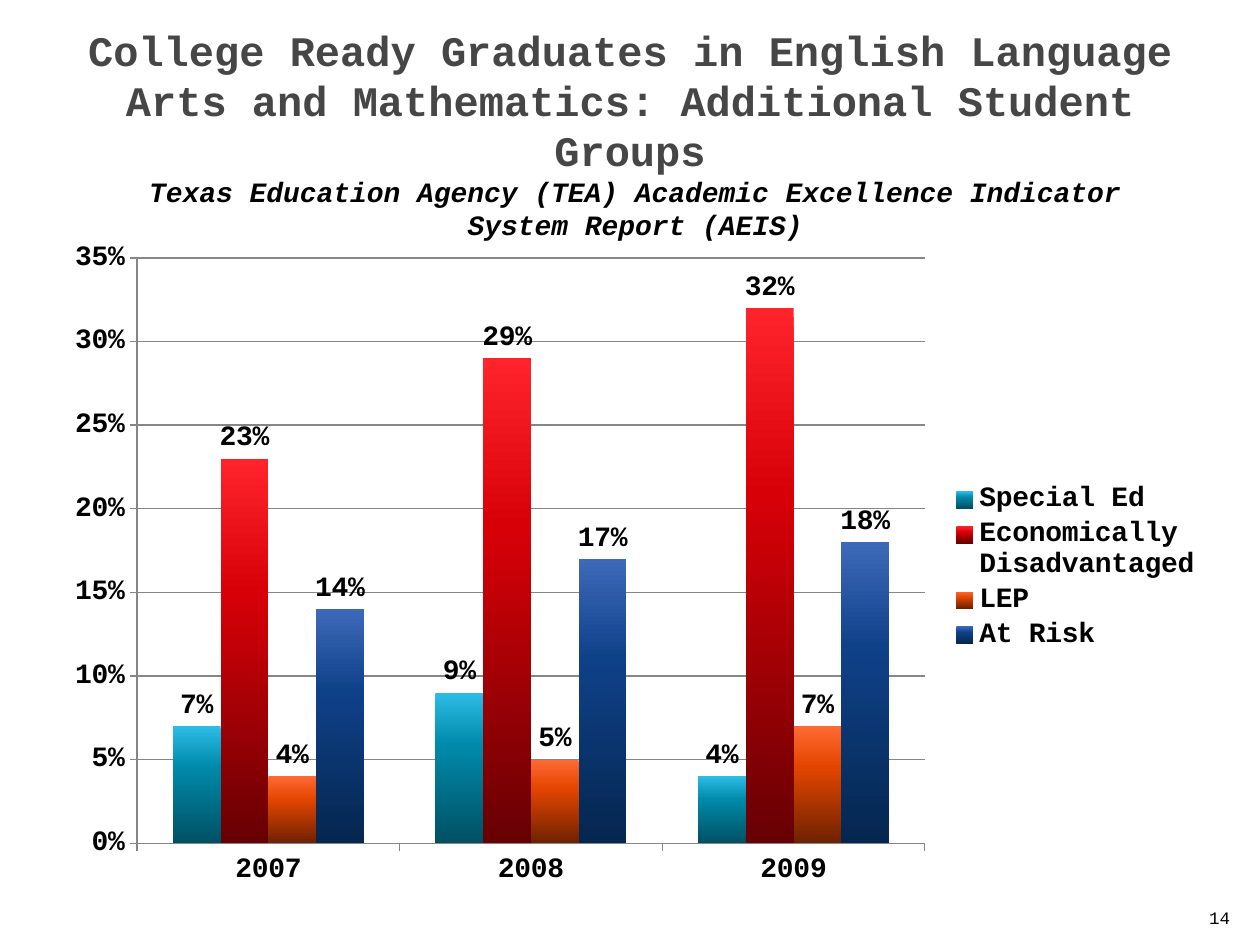
from lxml import etree
from copy import deepcopy
from pptx import Presentation
from pptx.chart.data import CategoryChartData
from pptx.dml.color import RGBColor
from pptx.enum.chart import XL_CHART_TYPE, XL_LABEL_POSITION, XL_LEGEND_POSITION, XL_TICK_MARK
from pptx.enum.text import MSO_ANCHOR, MSO_AUTO_SIZE, PP_ALIGN
from pptx.oxml.ns import qn
from pptx.util import Pt

COLUMN = XL_CHART_TYPE.COLUMN_CLUSTERED
OUTSIDE_END = XL_LABEL_POSITION.OUTSIDE_END
RIGHT_LEGEND = XL_LEGEND_POSITION.RIGHT
TICK_OUT, TICK_NONE = XL_TICK_MARK.OUTSIDE, XL_TICK_MARK.NONE
TOP, MIDDLE, BOTTOM = MSO_ANCHOR.TOP, MSO_ANCHOR.MIDDLE, MSO_ANCHOR.BOTTOM
CENTER, RIGHT = PP_ALIGN.CENTER, PP_ALIGN.RIGHT
NO_FIT = MSO_AUTO_SIZE.NONE

FONT = "Courier New"
COLORS = {"title": "464646", "text": "000000", "line": "868686"}
# Bar gradients: top, middle, bottom
GRADIENTS = {
    "Special Ed": ("2DBCE6", "008AAA", "005064"),
    "Economically Disadvantaged": ("FF242B", "D80007", "660003"),
    "LEP": ("FF6A32", "E34500", "6E2200"),
    "At Risk": ("3D69B9", "0F4189", "05264F"),
}
STOPS = (0, 0.35, 1)
YEARS = ("2007", "2008", "2009")
VALUES = {
    "Special Ed": (0.07, 0.09, 0.04),
    "Economically Disadvantaged": (0.23, 0.29, 0.32),
    "LEP": (0.04, 0.05, 0.07),
    "At Risk": (0.14, 0.17, 0.18),
}


def rgb(name):
    return RGBColor.from_string(COLORS.get(name, name))


def make_layout(x, y, w, h, inner=False):
    """Manual chart layout, as fractions of the chart frame."""
    layout = etree.Element(qn("c:layout"))
    manual = etree.SubElement(layout, qn("c:manualLayout"))
    parts = [("layoutTarget", "inner")] if inner else []
    parts += [("xMode", "edge"), ("yMode", "edge"), ("x", x), ("y", y), ("w", w), ("h", h)]
    for tag, value in parts:
        etree.SubElement(manual, qn("c:" + tag)).set("val", str(value))
    return layout


class Deck:
    def __init__(self, prs):
        self.slide = prs.slides.add_slide(prs.slide_layouts[5])

    def font(self, font, size, color="text", bold=False, italic=False):
        font.name, font.size = FONT, Pt(size)
        font.bold, font.italic = bold, italic
        font.color.rgb = rgb(color)

    def fill_text(self, sp, text, align, anchor, size, **style):
        tf = sp.text_frame
        tf.text = text
        tf.word_wrap, tf.auto_size = True, NO_FIT
        tf.vertical_anchor = anchor
        p = tf.paragraphs[0]
        p.alignment = align
        self.font(p.font, size, **style)

    def title(self, text, x, y, w, h):
        sp = self.slide.shapes.title
        sp.left, sp.top, sp.width, sp.height = Pt(x), Pt(y), Pt(w), Pt(h)
        self.fill_text(sp, text, CENTER, MIDDLE, 24, color="title", bold=True)

    def text(self, text, x, y, w, h, align, anchor, size, **style):
        sp = self.slide.shapes.add_textbox(Pt(x), Pt(y), Pt(w), Pt(h))
        self.fill_text(sp, text, align, anchor, size, **style)

    def gradient(self, fill, colors):
        fill.gradient()
        fill.gradient_angle = 270
        last = fill._fill._gradFill.gsLst[-1]
        last.addprevious(deepcopy(last))
        for stop, color, position in zip(fill.gradient_stops, colors, STOPS):
            stop.color.rgb = rgb(color)
            stop.position = position

    def chart(self, x, y, w, h):
        data = CategoryChartData(number_format="0%")
        data.categories = YEARS
        for name, values in VALUES.items():
            data.add_series(name, values)
        chart = self.slide.shapes.add_chart(COLUMN, Pt(x), Pt(y), Pt(w), Pt(h), data).chart
        chart.has_title = False
        self.font(chart.font, 16, bold=True)

        # Axes
        for axis in (chart.category_axis, chart.value_axis):
            axis.major_tick_mark, axis.minor_tick_mark = TICK_OUT, TICK_NONE
            axis.format.line.color.rgb = rgb("line")
            self.font(axis.tick_labels.font, 16, bold=True)
        axis = chart.value_axis
        axis.minimum_scale, axis.maximum_scale, axis.major_unit = 0, 0.35, 0.05
        axis.tick_labels.number_format = "0%"
        axis.tick_labels.number_format_is_linked = False
        axis.major_gridlines.format.line.color.rgb = rgb("line")

        # Bars and value labels
        plot = chart.plots[0]
        plot.gap_width, plot.overlap = 150, 0
        plot.vary_by_categories = False
        for series in plot.series:
            self.gradient(series.format.fill, GRADIENTS[series.name])
            series.invert_if_negative = False
            labels = series.data_labels
            labels.show_value = True
            labels.number_format, labels.number_format_is_linked = "0%", False
            labels.position = OUTSIDE_END
            self.font(labels.font, 16, bold=True)

        # Legend and plot placement
        chart.has_legend = True
        legend = chart.legend
        legend.position, legend.include_in_layout = RIGHT_LEGEND, False
        self.font(legend.font, 16, bold=True)
        for parent, layout in (
            (chart._chartSpace.chart.plotArea, make_layout(0.07, 0.04, 0.68, 0.87, inner=True)),
            (legend._element, make_layout(0.77, 0.37, 0.22, 0.26)),
        ):
            for old in parent.findall(qn("c:layout")):
                parent.remove(old)
            position = parent.find(qn("c:legendPos"))
            parent.insert(0 if position is None else 1, layout)


def main():
    prs = Presentation()
    prs.slide_width, prs.slide_height = Pt(720), Pt(540)
    s = Deck(prs)
    s.chart(32, 132, 662, 384.5)
    s.title("College Ready Graduates in English Language Arts and Mathematics: "
            "Additional Student Groups", 30, 12, 660, 90)
    s.text("Texas Education Agency (TEA) Academic Excellence Indicator System Report (AEIS)",
           60, 96, 606, 27, CENTER, TOP, 16, bold=True, italic=True)
    # Page number
    s.text("14", 681, 505, 29, 29, RIGHT, BOTTOM, 10)
    prs.save("out.pptx")


if __name__ == "__main__":
    main()
